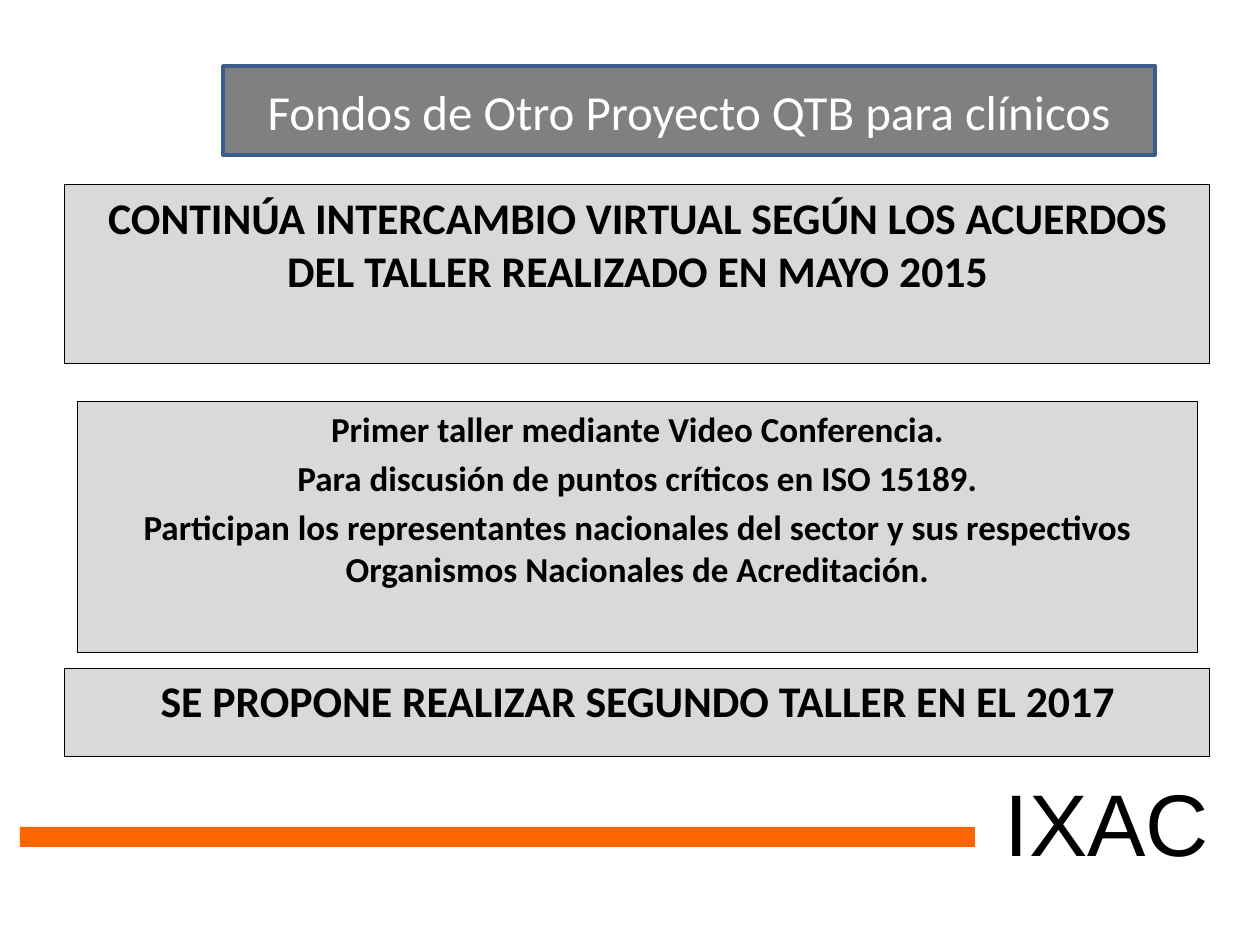
from lxml.etree import SubElement
from pptx import Presentation
from pptx.dml.color import RGBColor
from pptx.enum.shapes import MSO_SHAPE
from pptx.enum.text import MSO_ANCHOR, MSO_AUTO_SIZE, PP_ALIGN
from pptx.oxml.ns import qn
from pptx.util import Emu, Pt

PX = 914400 / 126
WHITE = RGBColor(0xFF, 0xFF, 0xFF)
BLACK = RGBColor(0, 0, 0)
ORANGE = RGBColor(0xFF, 0x66, 0)
LIGHT_GRAY = RGBColor(0xD9, 0xD9, 0xD9)
GRAY = RGBColor(0x80, 0x80, 0x80)
BLUE = RGBColor(0x3A, 0x5F, 0x8C)


def px(n):
    return Emu(round(n * PX))


def place(sp, box):
    sp.left, sp.top, sp.width, sp.height = map(px, box)


def paint(sp, fill, line=None, width=0.5):
    sp.fill.solid()
    sp.fill.fore_color.rgb = fill
    if line is None:
        sp.line.fill.background()
    else:
        sp.line.color.rgb = line
        sp.line.width = Pt(width)


def write(sp, lines, size, font="Calibri", color=BLACK, bold=False,
          anchor=MSO_ANCHOR.TOP, before=0):
    tf = sp.text_frame
    tf.word_wrap = True
    tf.auto_size = MSO_AUTO_SIZE.NONE
    tf.vertical_anchor = anchor
    for i, line in enumerate(lines):
        p = tf.add_paragraph() if i else tf.paragraphs[0]
        p.alignment = PP_ALIGN.CENTER
        p.space_before = Pt(before)
        r = p.add_run()
        r.text = line
        r.font.name, r.font.size, r.font.bold = font, Pt(size), bold
        r.font.color.rgb = color


def add_rect(s, box, fill, line=None):
    sp = s.shapes.add_shape(MSO_SHAPE.RECTANGLE, *map(px, box))
    sp.shadow.inherit = False
    paint(sp, fill, line)
    return sp


def title_banner(s, box, text):
    sp = s.shapes.title
    place(sp, box)
    # Two rounded corners on the title placeholder
    geom = SubElement(sp.element.spPr, qn("a:prstGeom"), prst="round2DiagRect")
    SubElement(geom, qn("a:avLst"))
    paint(sp, GRAY, BLUE, 2)
    write(sp, [text], 28, color=WHITE, anchor=MSO_ANCHOR.MIDDLE)


def statement(s, box, text):
    sp = add_rect(s, box, LIGHT_GRAY, BLACK)
    write(sp, [text], 25, bold=True, before=5)


def workshop_list(s, box, lines):
    sp = s.placeholders[1]
    place(sp, box)
    paint(sp, LIGHT_GRAY, BLACK)
    write(sp, lines, 20, bold=True, before=4)
    # Plain centred lines without bullets
    for p in sp.text_frame.paragraphs:
        pPr = p._p.get_or_add_pPr()
        pPr.set("marL", "0")
        pPr.set("indent", "0")
        SubElement(pPr, qn("a:buNone"))


def footer(s, box, name):
    x, y, w, h = box
    add_rect(s, (x, y + 60, 955, 20), ORANGE)
    label_w = 246
    sp = s.shapes.add_textbox(*map(px, (x + w - label_w, y, label_w, h)))
    write(sp, [name], 50, font="Arial", anchor=MSO_ANCHOR.MIDDLE)


def main():
    prs = Presentation()
    prs.slide_width, prs.slide_height = px(1260), px(945)
    s = prs.slides.add_slide(prs.slide_layouts[1])
    s.background.fill.solid()
    s.background.fill.fore_color.rgb = WHITE

    title_banner(s, (223, 66, 932, 89),
                 "Fondos de Otro Proyecto QTB para clínicos")
    statement(s, (65, 185, 1145, 179),
              "CONTINÚA INTERCAMBIO VIRTUAL SEGÚN LOS ACUERDOS "
              "DEL TALLER REALIZADO EN MAYO 2015")
    workshop_list(s, (77, 401, 1121, 251), [
        "Primer taller mediante Video Conferencia.",
        "Para discusión de puntos críticos en ISO 15189.",
        "Participan los representantes nacionales del sector y sus "
        "respectivos Organismos Nacionales de Acreditación.",
    ])
    statement(s, (65, 668, 1145, 89),
              "SE PROPONE REALIZAR SEGUNDO TALLER EN EL 2017")
    footer(s, (20, 767, 1210, 108), "IXAC")
    prs.save("out.pptx")


if __name__ == "__main__":
    main()
